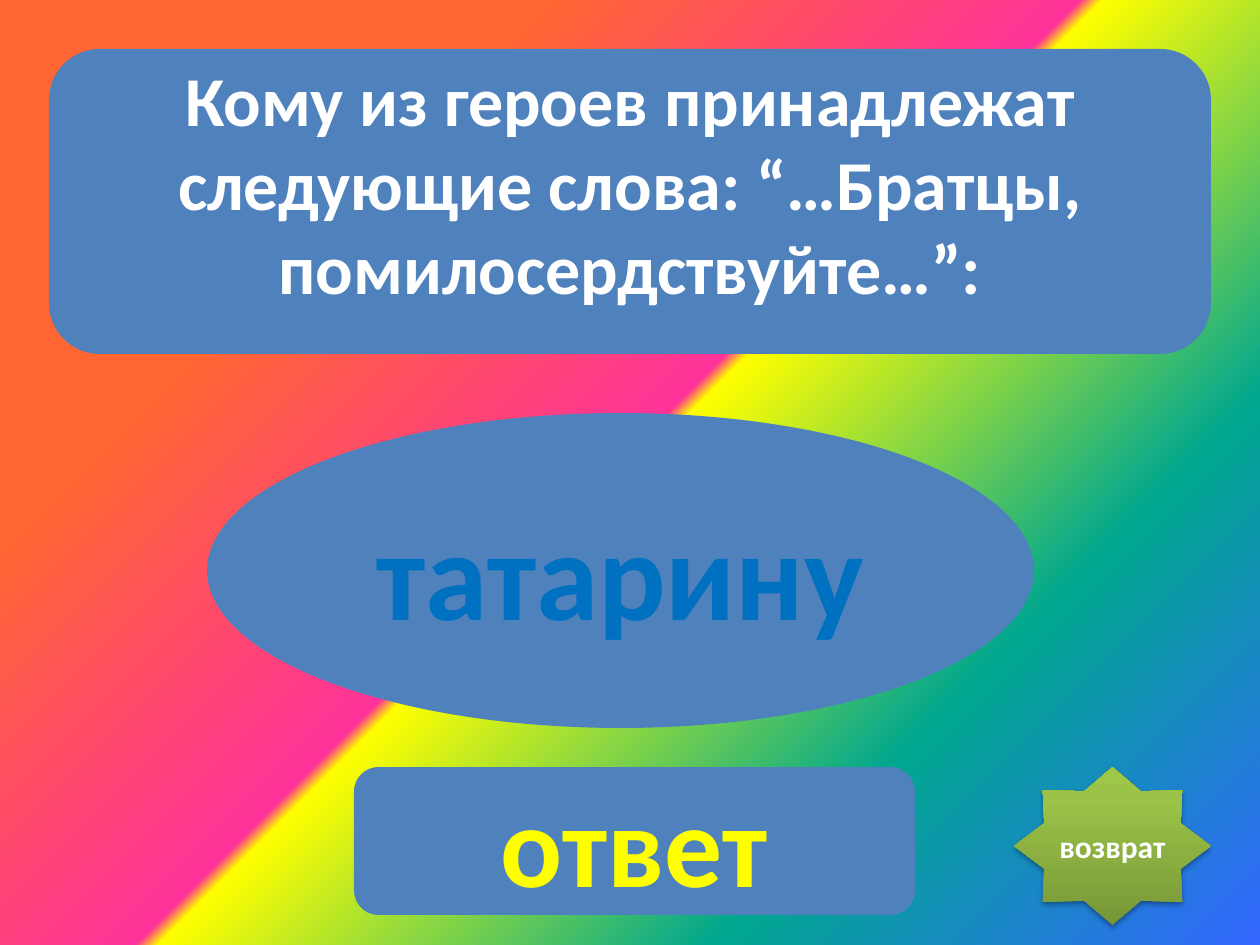
from lxml import etree
from pptx import Presentation
from pptx.dml.color import RGBColor
from pptx.enum.shapes import MSO_SHAPE
from pptx.enum.text import MSO_ANCHOR, PP_ALIGN
from pptx.oxml.ns import qn
from pptx.util import Pt

ROUNDED, OVAL, STAR = MSO_SHAPE.ROUNDED_RECTANGLE, MSO_SHAPE.OVAL, MSO_SHAPE.STAR_8_POINT
MIDDLE, CENTER = MSO_ANCHOR.MIDDLE, PP_ALIGN.CENTER
EMU_PER_PX = 914400 / 126
FONT = "Calibri"
BLUE, WHITE, YELLOW, DEEP_BLUE = "4F81BD", "FFFFFF", "FFFF00", "0070C0"
RAINBOW = [(25, "FF6633"), (49, "FF3399"), (50, "FFFF00"), (75, "01A78F"), (100, "3366FF")]
GREENS = [(0, "779737"), (80, "9BC348"), (100, "9DC746")]


def px(length):
    return round(length * EMU_PER_PX)


def color(hex_text):
    return RGBColor.from_string(hex_text)


def set_gradient(fill, owner, stops, angle):
    """Give the fill of the owner element its stops; the angle is counter-clockwise."""
    fill.gradient()
    fill.gradient_angle = angle
    stop_list = owner.find(".//" + qn("a:gsLst"))
    for stop in list(stop_list):
        stop_list.remove(stop)
    for percent, hex_text in stops:
        stop = etree.SubElement(stop_list, qn("a:gs"), pos=str(percent * 1000))
        etree.SubElement(stop, qn("a:srgbClr"), val=hex_text)


def add_label(page, kind, box, text, size, font_color):
    """Blue shape without outline, with bold centred text."""
    shape = page.shapes.add_shape(kind, *[px(length) for length in box])
    shape.shadow.inherit = False
    shape.fill.solid()
    shape.fill.fore_color.rgb = color(BLUE)
    shape.line.fill.background()
    frame = shape.text_frame
    frame.word_wrap = True
    frame.vertical_anchor = MIDDLE
    frame.text = text
    para = frame.paragraphs[0]
    para.alignment = CENTER
    font = para.runs[0].font
    font.name, font.size, font.bold = FONT, Pt(size), True
    font.color.rgb = color(font_color)
    return shape


def add_question(page, box):
    text = "Кому из героев принадлежат следующие слова: “…Братцы, помилосердствуйте…”:"
    shape = add_label(page, ROUNDED, box, text, 40, WHITE)
    # Deeper bottom margin lifts the text above the middle
    shape.text_frame.margin_bottom = px(44)


def add_return_star(page, box):
    shape = add_label(page, STAR, box, "возврат", 18, WHITE)
    properties = shape._element.spPr
    set_gradient(shape.fill, properties, GREENS, 90)
    # Soft shadow below the star
    effects = properties.find(qn("a:effectLst"))
    shadow = etree.SubElement(effects, qn("a:outerShdw"), blurRad="40000",
                              dist="23000", dir="5400000", rotWithShape="0")
    tint = etree.SubElement(shadow, qn("a:srgbClr"), val="000000")
    etree.SubElement(tint, qn("a:alpha"), val="35000")


def build_quiz_page(deck):
    page = deck.slides.add_slide(deck.slide_layouts[6])
    set_gradient(page.background.fill, page._element, RAINBOW, 315)
    add_question(page, (49, 49, 1162, 305))
    add_label(page, OVAL, (207, 413, 827, 315), "татарину", 72, DEEP_BLUE)
    add_label(page, ROUNDED, (354, 767, 561, 148), "ответ", 66, YELLOW)
    add_return_star(page, (1014, 767, 197, 158))


def main():
    deck = Presentation()
    deck.slide_width, deck.slide_height = px(1260), px(945)
    build_quiz_page(deck)
    deck.save("out.pptx")


if __name__ == "__main__":
    main()
